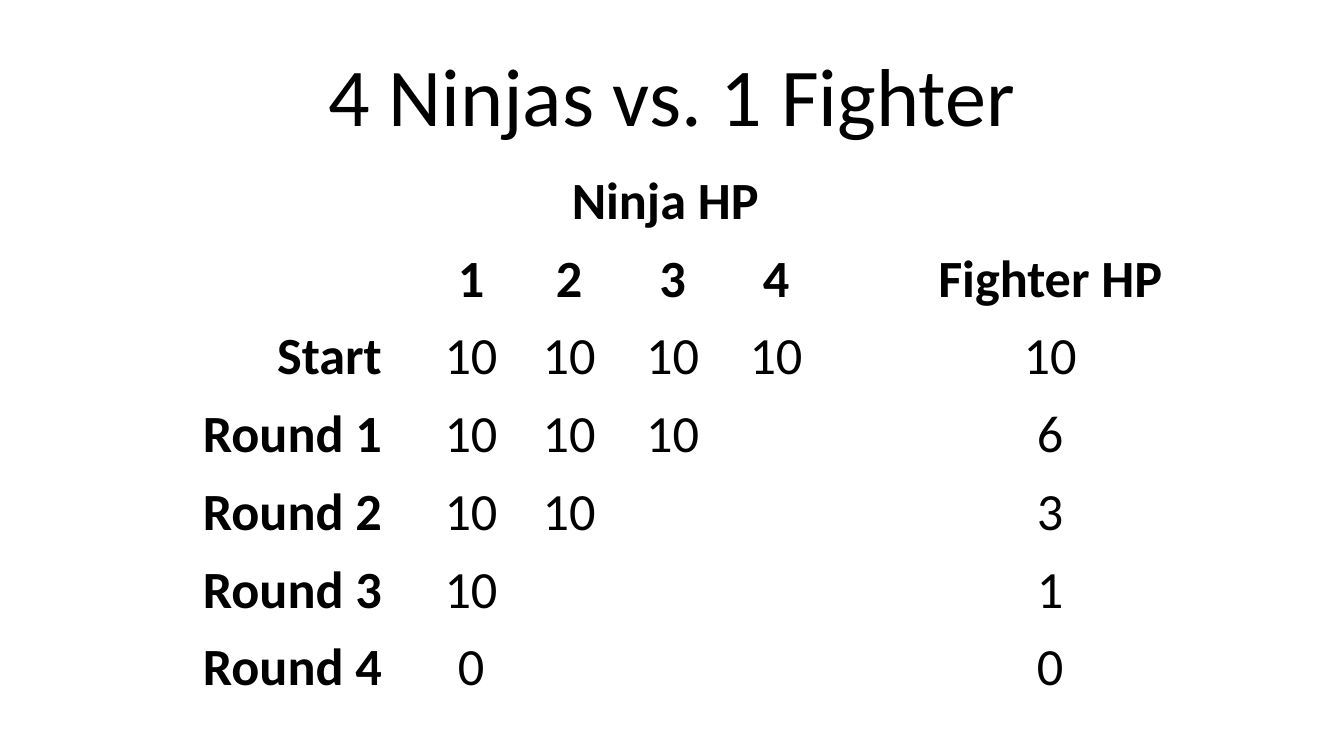
from pptx import Presentation
from pptx.dml.color import RGBColor as RGB
from pptx.enum.text import MSO_ANCHOR as ANCHOR, PP_ALIGN as ALIGN
from pptx.util import Inches, Pt

COLORS = {"background": "FFFFFF", "text": "000000"}
FONT = "Calibri"
WIDTH = 10
HEIGHT = WIDTH * 9 / 16

COLUMNS = [1.66, 0.31, 0.69, 0.77, 0.77, 0.77, 0.58, 2.15]
FIRST_NINJA, GAP, FIGHTER = 2, 6, 7
ROUNDS = [
    ("Start", [10, 10, 10, 10], 10),
    ("Round 1", [10, 10, 10], 6),
    ("Round 2", [10, 10], 3),
    ("Round 3", [10], 1),
    ("Round 4", [0], 0),
]


def write(tf, text, size, bold=False, align=ALIGN.CENTER):
    p = tf.paragraphs[0]
    p.alignment = align
    r = p.add_run()
    r.text = str(text)
    r.font.name, r.font.size, r.font.bold = FONT, Pt(size), bold
    r.font.color.rgb = RGB.from_string(COLORS["text"])


def add_title(s, box, text):
    sp = s.shapes.add_textbox(*map(Inches, box))
    tf = sp.text_frame
    tf.word_wrap = True
    tf.vertical_anchor = ANCHOR.MIDDLE
    write(tf, text, 44)


def add_score_table(s, box):
    """Hit points per round: one column per ninja, then the fighter."""
    n_rows = len(ROUNDS) + 2
    left, top, width, height = box
    frame = s.shapes.add_table(n_rows, len(COLUMNS), *map(Inches, box))
    table = frame.table
    table.first_row = table.horz_banding = False
    for column, share in zip(table.columns, COLUMNS):
        column.width = Inches(width * share / sum(COLUMNS))
    for row in table.rows:
        row.height = Inches(height / n_rows)
    for cell in table.iter_cells():
        cell.fill.background()
        cell.vertical_anchor = ANCHOR.BOTTOM
        cell.margin_left = cell.margin_right = cell.margin_top = Inches(0.01)
        cell.margin_bottom = 0

    def put(row, col, text, **style):
        write(table.cell(row, col).text_frame, text, 28, **style)

    table.cell(0, FIRST_NINJA).merge(table.cell(0, GAP))
    put(0, FIRST_NINJA, "Ninja HP", bold=True)
    for i in range(4):
        put(1, FIRST_NINJA + i, i + 1, bold=True)
    put(1, FIGHTER, "Fighter HP", bold=True)

    for row, (label, ninjas, fighter) in enumerate(ROUNDS, start=2):
        put(row, 0, label, bold=True, align=ALIGN.RIGHT)
        for i, hp in enumerate(ninjas):
            put(row, FIRST_NINJA + i, hp)
        put(row, FIGHTER, fighter)


def main():
    prs = Presentation()
    prs.slide_width, prs.slide_height = Inches(WIDTH), Inches(HEIGHT)
    s = prs.slides.add_slide(prs.slide_layouts[6])
    s.background.fill.solid()
    s.background.fill.fore_color.rgb = RGB.from_string(COLORS["background"])
    add_title(s, (0.05 * WIDTH, 0.04 * HEIGHT, 0.9 * WIDTH, HEIGHT / 6),
              "4 Ninjas vs. 1 Fighter")
    add_score_table(s, (1.19, 1.16, sum(COLUMNS), 4.05))
    prs.save("out.pptx")


if __name__ == "__main__":
    main()
